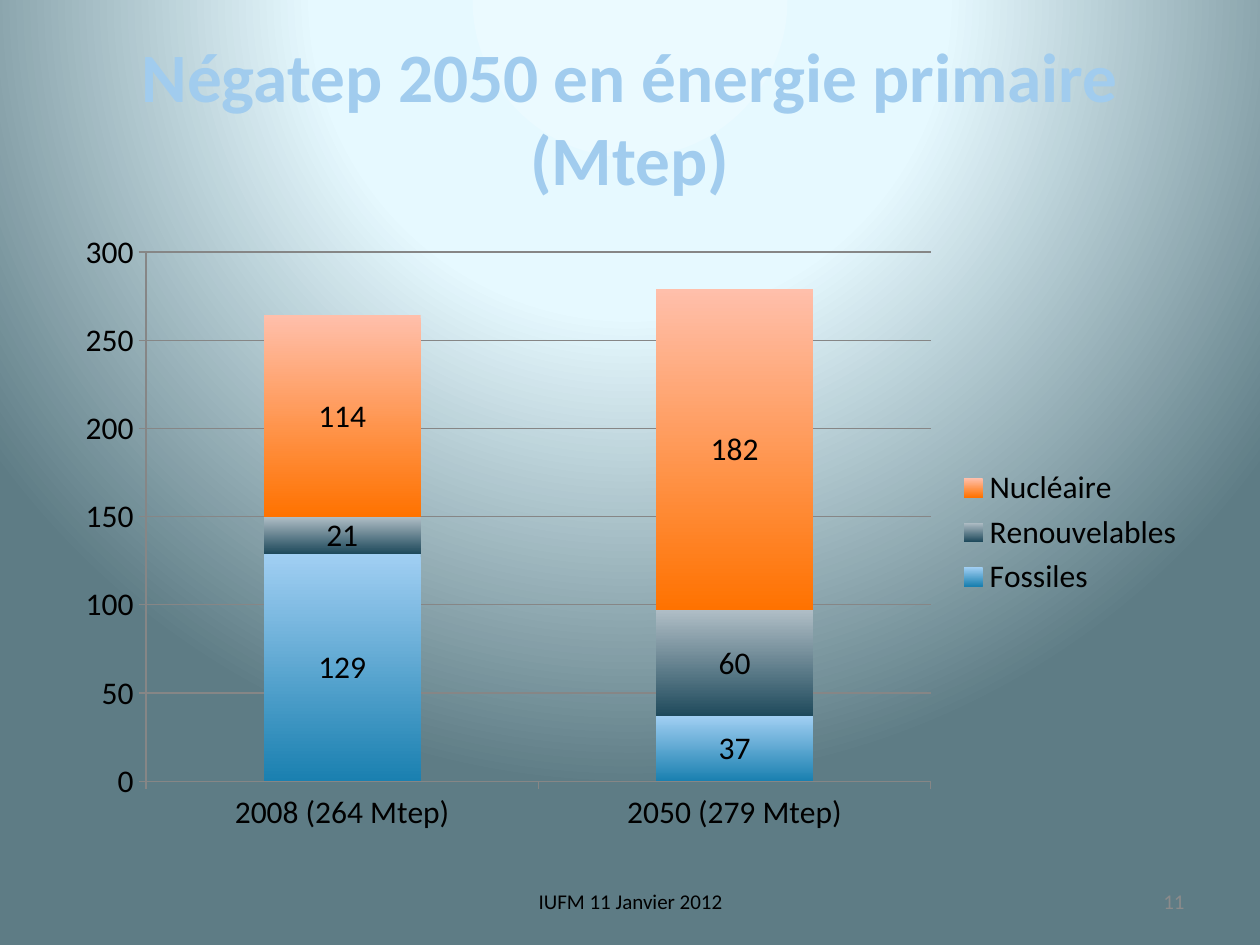
from pptx import Presentation
from pptx.chart.data import CategoryChartData
from pptx.dml.color import RGBColor
from pptx.enum.chart import XL_CHART_TYPE as ChartType, XL_LEGEND_POSITION as LegendPos
from pptx.enum.chart import XL_LABEL_POSITION as LabelPos, XL_TICK_MARK as TickMark
from pptx.enum.text import MSO_ANCHOR as Anchor, PP_ALIGN as Align
from pptx.oxml import parse_xml
from pptx.oxml.ns import nsdecls, qn
from pptx.util import Inches, Pt

FONT = "Calibri"
COLORS = {
    "title": "A1CCEE",
    "text": "000000",
    "number": "8B8B8B",
    "grid": "868686",
}
BACKGROUND_STOPS = [(0, "EBFAFF"), (40, "E6F9FF"), (100, "5E7C85")]
CATEGORIES = ["2008 (264 Mtep)", "2050 (279 Mtep)"]
# name, values, top and bottom colours of the bars
SERIES = [
    ("Fossiles", (129, 37), ("A1CFF3", "1A80B0")),
    ("Renouvelables", (21, 60), ("B0BEC6", "1F4A5C")),
    ("Nucléaire", (114, 182), ("FFBFAB", "FF7200")),
]


def rgb(name):
    return RGBColor.from_string(COLORS[name])


def set_background(s):
    """Fill the slide with a circular gradient centred above its top edge."""
    s.background.fill.gradient()
    old = s._element.find(".//" + qn("a:gradFill"))
    stops = "".join(
        f'<a:gs pos="{pos * 1000}"><a:srgbClr val="{color}"/></a:gs>'
        for pos, color in BACKGROUND_STOPS
    )
    new = parse_xml(
        f'<a:gradFill {nsdecls("a")} rotWithShape="1"><a:gsLst>{stops}</a:gsLst>'
        '<a:path path="circle">'
        '<a:fillToRect l="50000" t="-80000" r="50000" b="180000"/>'
        "</a:path></a:gradFill>"
    )
    old.getparent().replace(old, new)


def add_text(s, text, box, size, color, align=Align.CENTER, bold=False):
    tf = s.shapes.add_textbox(*map(Inches, box)).text_frame
    tf.word_wrap = True
    tf.vertical_anchor = Anchor.MIDDLE
    p = tf.paragraphs[0]
    p.text = text
    p.alignment = align
    p.font.name = FONT
    p.font.size = Pt(size)
    p.font.bold = bold
    p.font.color.rgb = rgb(color)


def style_axis(axis):
    axis.major_tick_mark = TickMark.OUTSIDE
    axis.minor_tick_mark = TickMark.NONE
    axis.format.line.color.rgb = rgb("grid")


def style_series(series, colors):
    fill = series.format.fill
    fill.gradient()
    fill.gradient_angle = 270
    for stop, color in zip(fill.gradient_stops, colors):
        stop.color.rgb = RGBColor.from_string(color)
    labels = series.data_labels
    labels.show_value = True
    labels.position = LabelPos.CENTER


def add_energy_chart(s, box):
    data = CategoryChartData()
    data.categories = CATEGORIES
    for name, values, _ in SERIES:
        data.add_series(name, values)
    chart = s.shapes.add_chart(
        ChartType.COLUMN_STACKED, *map(Inches, box), data
    ).chart
    chart.has_title = False
    chart.font.name = FONT
    chart.font.size = Pt(18)
    chart.font.color.rgb = rgb("text")
    chart.has_legend = True
    chart.legend.position = LegendPos.RIGHT
    chart.legend.include_in_layout = False

    style_axis(chart.category_axis)
    axis = chart.value_axis
    style_axis(axis)
    axis.minimum_scale, axis.maximum_scale, axis.major_unit = 0, 300, 50
    axis.has_major_gridlines = True
    axis.major_gridlines.format.line.color.rgb = rgb("grid")

    plot = chart.plots[0]
    plot.vary_by_categories = False
    plot.gap_width, plot.overlap = 150, 100
    for series, (_, _, colors) in zip(plot.series, SERIES):
        style_series(series, colors)


def main():
    prs = Presentation()
    prs.slide_width, prs.slide_height = Inches(10), Inches(7.5)
    s = prs.slides.add_slide(prs.slide_layouts[6])
    set_background(s)
    add_text(s, "Négatep 2050 en énergie primaire (Mtep)",
             (0.5, 0.3, 9, 1.25), 39.6, "title", bold=True)
    add_energy_chart(s, (0.5, 1.75, 9, 4.95))
    add_text(s, "IUFM 11 Janvier 2012", (3.42, 6.95, 3.17, 0.4), 12, "text")
    add_text(s, "11", (7.17, 6.95, 2.33, 0.4), 12, "number", Align.RIGHT)
    prs.save("out.pptx")


if __name__ == "__main__":
    main()
